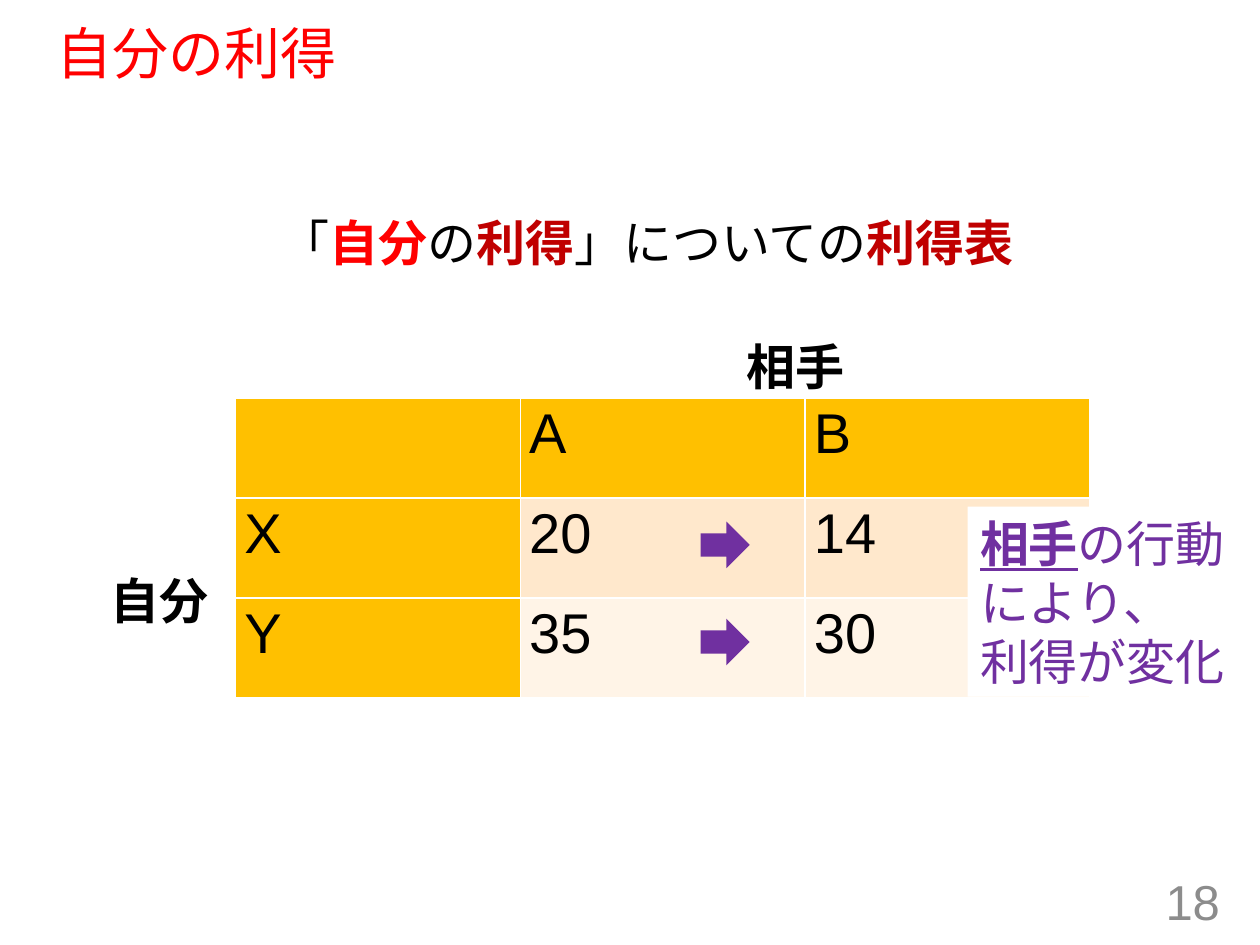
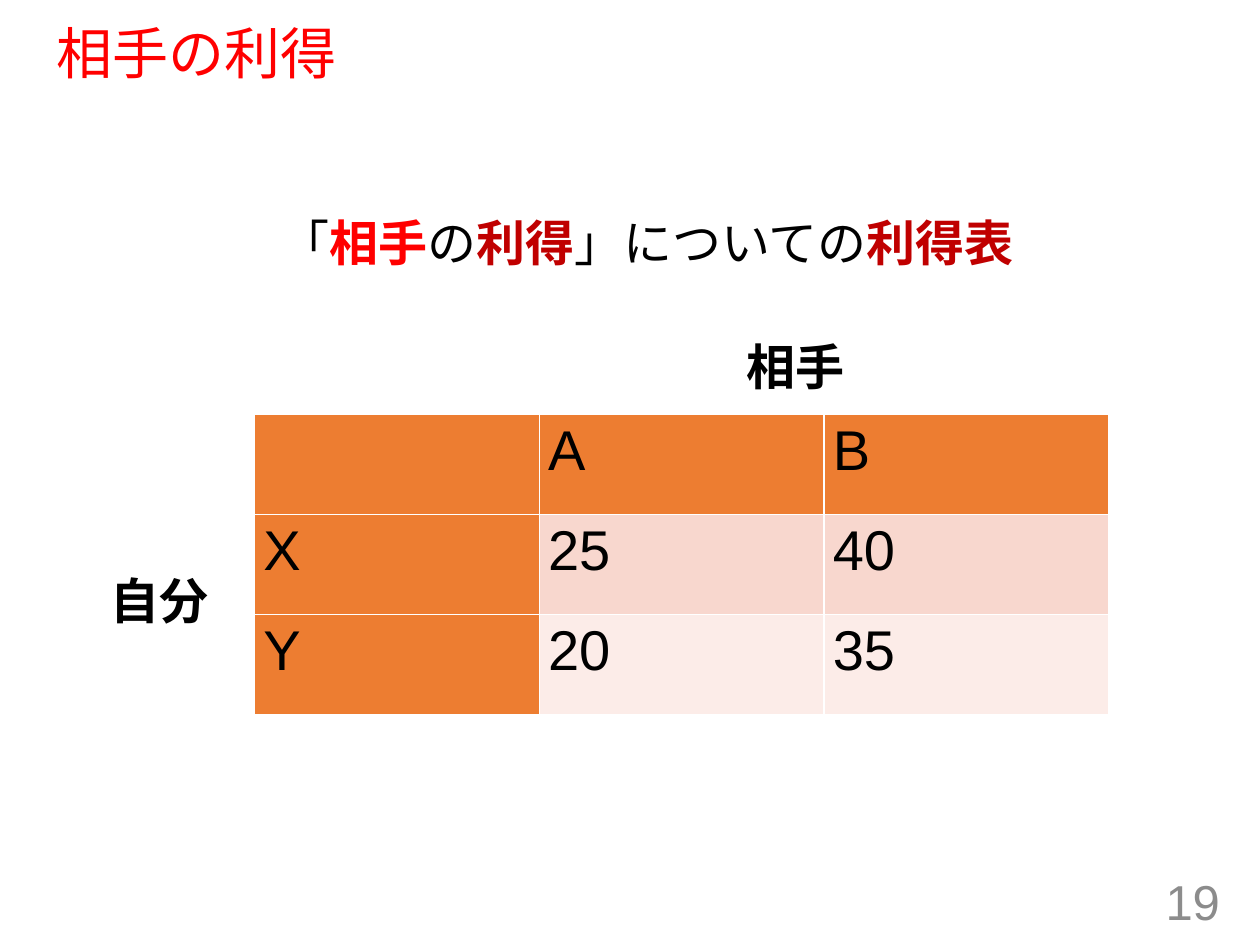
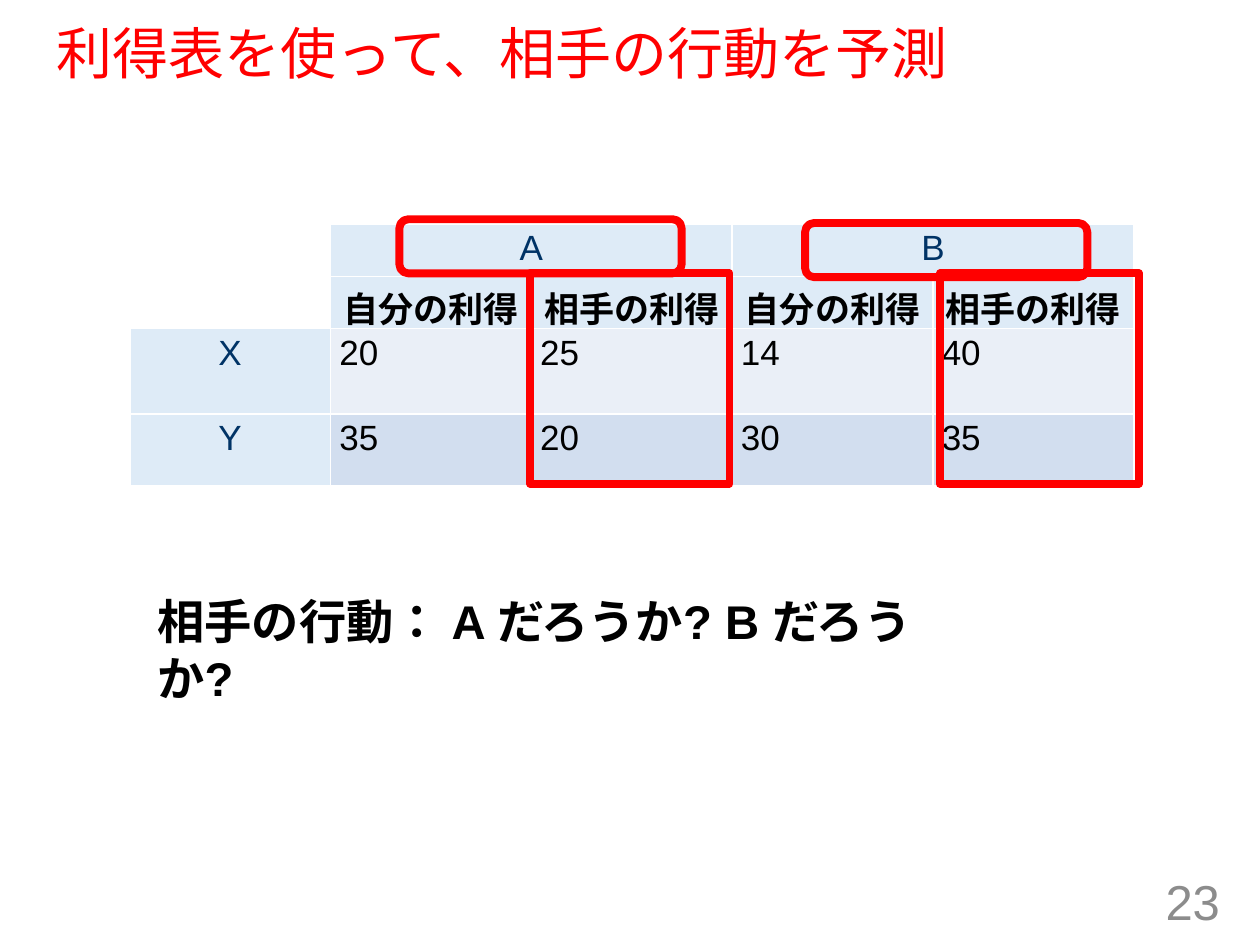
from dataclasses import dataclass
from typing import NamedTuple

from pptx import Presentation
from pptx.dml.color import RGBColor
from pptx.enum.lang import MSO_LANGUAGE_ID as Lang
from pptx.enum.shapes import MSO_SHAPE as Shape
from pptx.enum.text import MSO_ANCHOR as Anchor, MSO_AUTO_SIZE as AutoSize, PP_ALIGN as Align
from pptx.util import Inches, Pt

# Grid: a cell is one hundredth of the slide's width, and square
COLS, ROWS = 100, 75
SLIDE_W, SLIDE_H = Inches(10), Inches(7.5)


@dataclass(frozen=True)
class Theme:
    font: str = "Arial"
    black: str = "000000"
    white: str = "FFFFFF"
    red: str = "FF0000"
    dark_red: str = "C00000"
    purple: str = "7030A0"
    navy: str = "003366"
    grey: str = "8C8C8C"
    title_size: int = 32
    body_size: int = 28
    question_size: int = 27
    small_size: int = 20
    frame_width: float = 4.5


T = Theme()


class Box(NamedTuple):
    """A place on the grid, in columns and rows."""
    x: float
    y: float
    w: float
    h: float


class Run(NamedTuple):
    text: str
    color: str = T.black
    bold: bool = False
    underline: bool = False


class Palette(NamedTuple):
    """Table fills: header cells, then each body row."""
    header: str
    body: tuple[str, str]


GOLD = Palette("FFC000", ("FFE8CC", "FFF4E7"))
ORANGE = Palette("ED7D31", ("F8D7CE", "FCECE8"))
BLUE = Palette("DEEBF7", ("EAEFF7", "D2DEEF"))

TITLE = Box(3.5, 1.9, 92.5, 5.1)
PAGE_NUMBER = Box(75.3, 69.5, 22.5, 4)
CAPTION = Box(21.3, 16.4, 60.9, 5.7)
OPPONENT = Box(58.3, 26.2, 9.9, 5.7)
SELF = Box(7.8, 44.8, 9.9, 5.7)


# Helpers
def col(n: float) -> int:
    return round(SLIDE_W * n / COLS)


def row(n: float) -> int:
    return round(SLIDE_H * n / ROWS)


def place(box: Box) -> tuple[int, int, int, int]:
    return col(box.x), row(box.y), col(box.w), row(box.h)


def rgb(color: str) -> RGBColor:
    return RGBColor.from_string(color)


def write(p, runs: list[Run], size: float, align=Align.LEFT) -> None:
    p.alignment = align
    for run in runs:
        r = p.add_run()
        r.text = run.text
        f = r.font
        f.name, f.size, f.bold, f.underline = T.font, Pt(size), run.bold, run.underline
        f.color.rgb = rgb(run.color)
        f.language_id = Lang.JAPANESE


def fill_text(tf, lines: list[list[Run]], size: float) -> None:
    tf.word_wrap = False
    for i, runs in enumerate(lines):
        write(tf.add_paragraph() if i else tf.paragraphs[0], runs, size)


def add_text(s, box: Box, runs: list[Run], size: float = T.body_size) -> None:
    fill_text(s.shapes.add_textbox(*place(box)).text_frame, [runs], size)


def add_filled(s, kind, box: Box, color: str):
    sp = s.shapes.add_shape(kind, *place(box))
    sp.shadow.inherit = False
    sp.fill.solid()
    sp.fill.fore_color.rgb = rgb(color)
    sp.line.fill.background()
    return sp


def add_frame(s, kind, box: Box) -> None:
    sp = s.shapes.add_shape(kind, *place(box))
    sp.shadow.inherit = False
    sp.fill.background()
    sp.line.color.rgb = rgb(T.red)
    sp.line.width = Pt(T.frame_width)


def set_cell(cell, fill: str, run: Run, size: float, align=Align.LEFT) -> None:
    cell.fill.solid()
    cell.fill.fore_color.rgb = rgb(fill)
    cell.margin_left = cell.margin_right = col(0.7)
    cell.margin_top = cell.margin_bottom = row(0.4)
    if run.text:
        write(cell.text_frame.paragraphs[0], [run], size, align)


def add_grid(s, box: Box, n_cols: int, heights: list[float]):
    table = s.shapes.add_table(len(heights), n_cols, *place(box)).table
    table.horz_banding = False
    for column in table.columns:
        column.width = col(box.w / n_cols)
    for line, height in zip(table.rows, heights):
        line.height = row(height)
    return table


# Slide frame shared by all slides
def add_slide(prs, title: str, number: int):
    s = prs.slides.add_slide(prs.slide_layouts[5])
    sp = s.shapes.title
    sp.left, sp.top, sp.width, sp.height = place(TITLE)
    tf = sp.text_frame
    tf.auto_size = AutoSize.NONE
    tf.vertical_anchor = Anchor.MIDDLE
    p = tf.paragraphs[0]
    p.line_spacing = 0.9
    write(p, [Run(title, T.red)], T.title_size)

    tf = s.shapes.add_textbox(*place(PAGE_NUMBER)).text_frame
    tf.word_wrap = True
    tf.vertical_anchor = Anchor.MIDDLE
    write(tf.paragraphs[0], [Run(str(number), T.grey)], T.body_size, Align.RIGHT)
    return s


# One player's payoffs
def add_payoff_slide(prs, player: str, number: int, x: float, y: float,
                     palette: Palette, payoffs: list[list[str]]):
    s = add_slide(prs, f"{player}の利得", number)
    add_text(s, CAPTION, [
        Run("「"), Run(player, T.red, True), Run("の"), Run("利得", T.dark_red, True),
        Run("」についての"), Run("利得表", T.dark_red, True)])

    table = add_grid(s, Box(x, y, 67.8, 23.8), 3, [7.93] * 3)
    values = [["", "A", "B"], ["X", *payoffs[0]], ["Y", *payoffs[1]]]
    for i, line in enumerate(values):
        for j, value in enumerate(line):
            fill = palette.body[i - 1] if i and j else palette.header
            set_cell(table.cell(i, j), fill, Run(value), T.title_size)

    add_text(s, OPPONENT, [Run("相手", bold=True)])
    add_text(s, SELF, [Run("自分", bold=True)])
    return s


def add_change_note(s) -> None:
    for y in (41.3, 49):
        add_filled(s, Shape.DOWN_ARROW, Box(55.7, y, 3.7, 3.9), T.purple).rotation = 270
    note = add_filled(s, Shape.RECTANGLE, Box(76.8, 40.2, 21.7, 15.1), T.white)
    fill_text(note.text_frame, [
        [Run("相手", T.purple, True, True), Run("の行動", T.purple)],
        [Run("により、", T.purple)],
        [Run("利得が変化", T.purple)]], T.body_size)


# Both players' payoffs side by side
def add_prediction_slide(prs) -> None:
    s = add_slide(prs, "利得表を使って、相手の行動を予測", 23)
    table = add_grid(s, Box(10.3, 17.8, 79.7, 20.6), 5, [3.8, 3.8, 6.8, 5.7])
    values = [
        ["", "A", "", "B", ""],
        ["", *["自分の利得", "相手の利得"] * 2],
        ["X", "20", "25", "14", "40"],
        ["Y", "35", "20", "30", "35"],
    ]
    for j in (1, 3):
        table.cell(0, j).merge(table.cell(0, j + 1))
    for i, line in enumerate(values):
        for j, value in enumerate(line):
            is_body = i > 1 and j > 0
            if is_body:
                fill = BLUE.body[i - 2]
            else:
                fill = BLUE.header if i > 1 or j else T.white
            is_player = i == 1
            color = T.black if is_body or is_player else T.navy
            set_cell(table.cell(i, j), fill, Run(value, color, is_player),
                     T.small_size, Align.LEFT if is_body else Align.CENTER)

    add_text(s, Box(11.5, 46.5, 66.2, 9.6),
             [Run("相手の行動： A だろうか? B だろうか?", bold=True)], T.question_size)
    for x in (42.1, 74.6):
        add_frame(s, Shape.RECTANGLE, Box(x, 21.7, 15.8, 16.7))
    for x, y in ((31.7, 17.4), (63.9, 17.7)):
        add_frame(s, Shape.ROUNDED_RECTANGLE, Box(x, y, 22.4, 4.3))


def main() -> None:
    prs = Presentation()
    prs.slide_width, prs.slide_height = SLIDE_W, SLIDE_H
    s = add_payoff_slide(prs, "自分", 18, 18.7, 31.6, GOLD, [["20", "14"], ["35", "30"]])
    add_change_note(s)
    add_payoff_slide(prs, "相手", 19, 20.2, 32.9, ORANGE, [["25", "40"], ["20", "35"]])
    add_prediction_slide(prs)
    prs.save("out.pptx")


if __name__ == "__main__":
    main()
